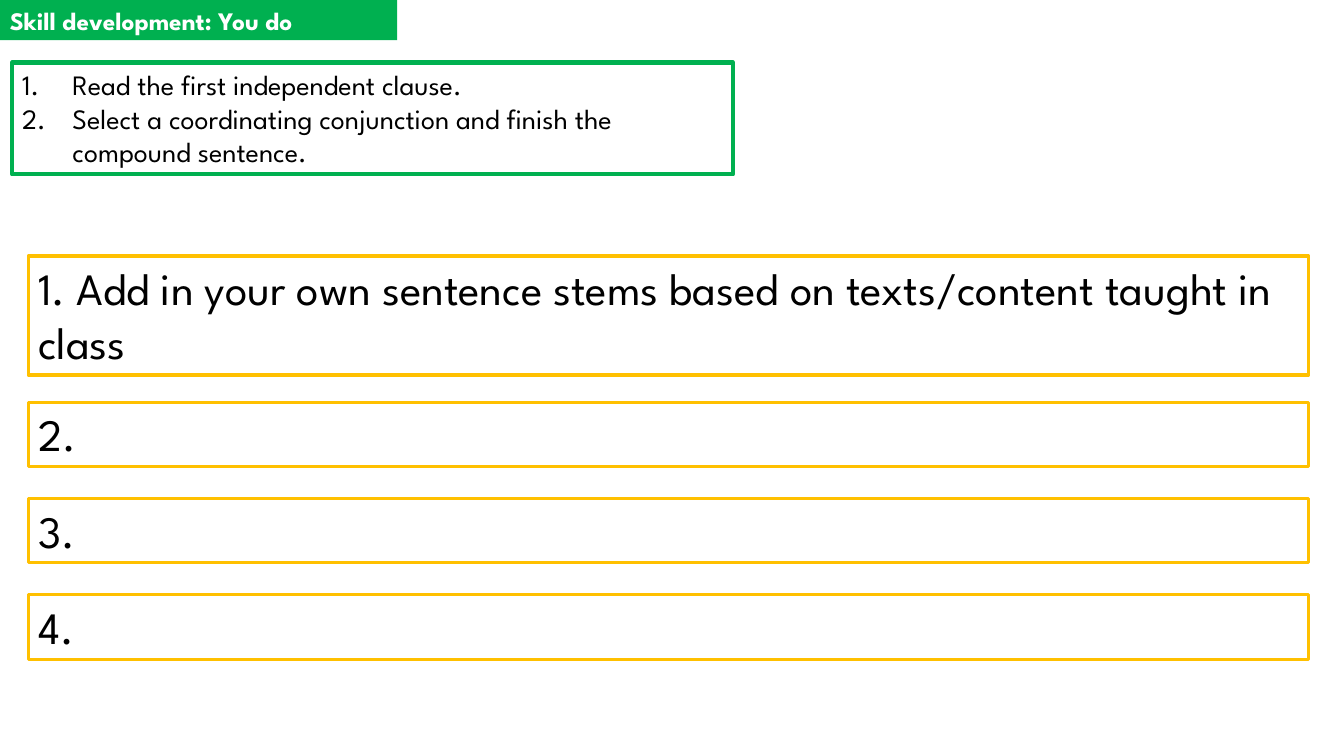
"""Build a "You do" practice slide with instructions and four sentence stems."""
from pptx import Presentation
from pptx.dml.color import RGBColor
from pptx.enum.text import MSO_AUTO_SIZE
from pptx.util import Inches, Pt
from lxml.etree import SubElement
from pptx.oxml.ns import qn

THEME = {
    "font": "League Spartan",
    "green": RGBColor.from_string("00B050"),
    "amber": RGBColor.from_string("FFC000"),
    "white": RGBColor.from_string("FFFFFF"),
    "black": RGBColor.from_string("000000"),
    "title": 18, "steps": 20, "stem": 32,
}

prs = Presentation()
prs.slide_width, prs.slide_height = Inches(13.33), Inches(7.5)
s = prs.slides.add_slide(prs.slide_layouts[6])


def add_box(box, lines, size, color="black", fill=None, line=None, width=0, bold=False):
    """Add a text box with an optional fill and outline."""
    sp = s.shapes.add_textbox(*(Inches(v) for v in box))
    if fill:
        sp.fill.solid()
        sp.fill.fore_color.rgb = THEME[fill]
    if line:
        sp.line.color.rgb = THEME[line]
        sp.line.width = Pt(width)
    tf = sp.text_frame
    tf.word_wrap = True
    tf.auto_size = MSO_AUTO_SIZE.SHAPE_TO_FIT_TEXT
    tf.text = "\n".join(lines)
    for p in tf.paragraphs:
        for r in p.runs:
            r.font.name = THEME["font"]
            r.font.size = Pt(THEME[size])
            r.font.bold = bold
            r.font.color.rgb = THEME[color]
    return tf


add_box((0, 0, 3.94, 0.4), ["Skill development: You do"], "title",
        color="white", fill="green", bold=True)

steps = add_box((0.12, 0.62, 7.15, 1.11), [
    "Read the first independent clause.",
    "Select a coordinating conjunction and finish the compound sentence.",
], "steps", fill="white", line="green", width=3)
for p in steps.paragraphs:
    pPr = p._p.get_or_add_pPr()
    pPr.set("marL", str(Inches(0.5)))
    pPr.set("indent", str(-Inches(0.5)))
    SubElement(pPr, qn("a:buFont"), typeface="+mj-lt")
    SubElement(pPr, qn("a:buAutoNum"), type="arabicPeriod")

left, width, row_h = 0.28, 12.7, 0.64
first_row, pitch = 3.99, 0.955
add_box((left, 2.54, width, 1.18),
        ["1. Add in your own sentence stems based on texts/content taught in class"],
        "stem", line="amber", width=2.25)
for i in range(3):
    add_box((left, first_row + i * pitch, width, row_h), [f"{i + 2}."],
            "stem", line="amber", width=2.25)

prs.save("out.pptx")
